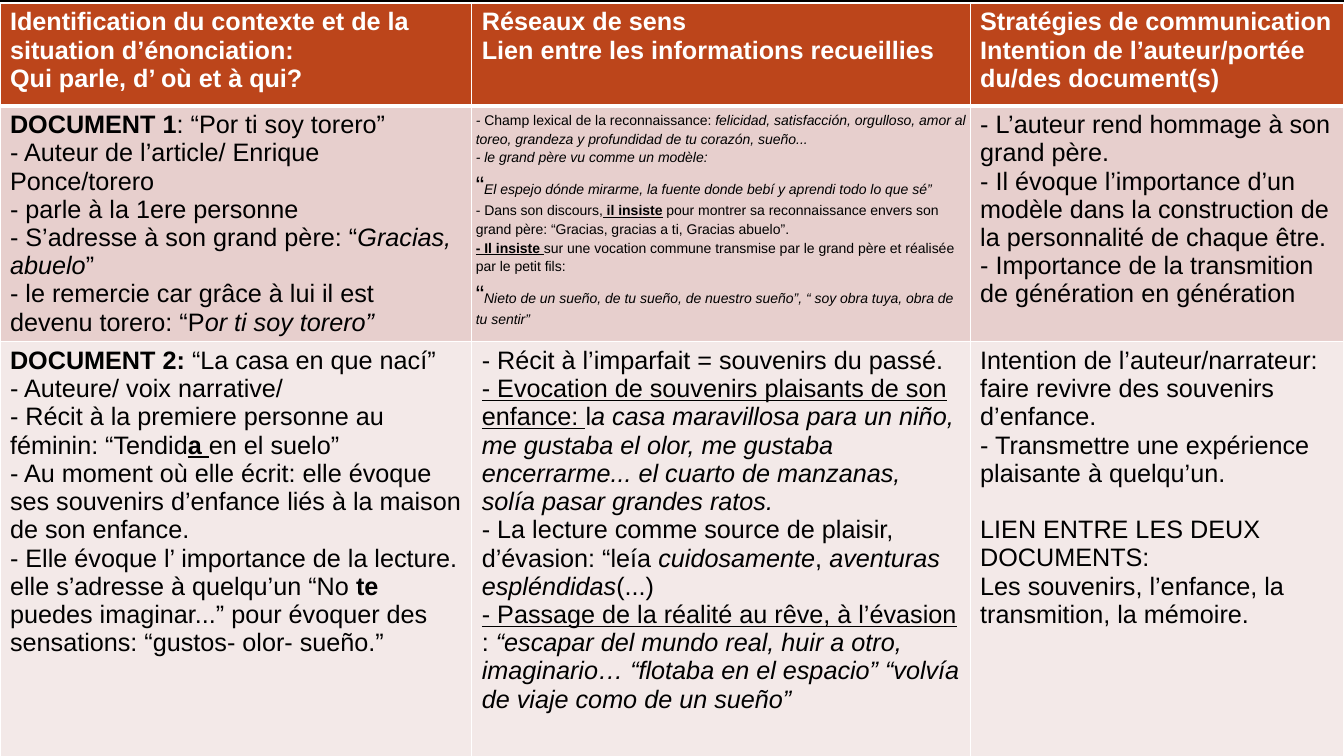
from lxml.etree import SubElement
from pptx import Presentation
from pptx.dml.color import RGBColor
from pptx.enum.text import MSO_ANCHOR
from pptx.oxml.ns import qn
from pptx.util import Pt

BLACK = RGBColor(0x00, 0x00, 0x00)
WHITE = RGBColor(0xFF, 0xFF, 0xFF)
RUST = RGBColor(0xBC, 0x45, 0x1B)
ROSE = RGBColor(0xE7, 0xCF, 0xCD)
PALE_ROSE = RGBColor(0xF3, 0xE9, 0xE8)

FONT = "Arial"
COLUMN_WIDTHS = [337, 356, 267]
ROW_HEIGHTS = [73.44, 167.76, 318.24]
ROW_FILLS = [RUST, ROSE, PALE_ROSE]
ROW_INKS = [WHITE, BLACK, BLACK]
BORDERS = {"lnL": 1, "lnR": 1, "lnT": 1, "lnB": 1}
SMALL_CELL = (1, 1)
LINK_HEADING = "LIEN ENTRE LES DEUX DOCUMENTS:"

HEADER = [
    [[("Identification du contexte et de la situation d’énonciation:", "b")],
     [("Qui parle, d’ où et à qui?", "b")]],
    [[("Réseaux de sens", "b")],
     [("Lien entre les informations recueillies", "b")]],
    [[("Stratégies de communication", "b")],
     [("Intention de l’auteur/portée du/des document(s)", "b")]],
]

DOCUMENT_1 = [
    [[("DOCUMENT 1", "b"), (": “Por ti soy torero”", "")],
     [("- Auteur de l’article/ Enrique Ponce/torero", "")],
     [("- parle à la 1ere personne", "")],
     [("- S’adresse à son grand père: “", ""), ("Gracias, abuelo", "i"), ("”", "")],
     [("- le remercie car grâce à lui il est devenu torero: “P", ""),
      ("or ti soy torero”", "i")]],
    [[("- ", "i"), ("Champ lexical de la reconnaissance: ", ""),
      ("felicidad, satisfacción, orgulloso, amor al toreo, grandeza y "
       "profundidad de tu corazón, sueño...", "i")],
     [("- le grand père vu comme un modèle:", "i")],
     [("“", "", 18),
      ("El espejo dónde mirarme, la fuente donde bebí y aprendi todo lo que sé”", "i")],
     [("- Dans son discours,", ""), (" il insiste", "bu"),
      (" pour montrer sa reconnaissance envers son grand père: "
       "“Gracias, gracias a ti, Gracias abuelo”.", "")],
     [("- Il insiste ", "bu"),
      ("sur une vocation commune transmise par le grand père et réalisée "
       "par le petit fils:", "")],
     [("“", "", 18),
      ("Nieto de un sueño, de tu sueño, de nuestro sueño”, “ soy obra tuya, "
       "obra de tu sentir”", "i")]],
    [[("- L’auteur rend hommage à son grand père.", "")],
     [("- Il évoque l’importance d’un modèle dans la construction de la "
       "personnalité de chaque être.", "")],
     [("- Importance de la transmition de génération en génération", "")]],
]

DOCUMENT_2 = [
    [[("DOCUMENT 2:", "b"), (" “La casa en que nací”", "")],
     [("- Auteure/ voix narrative/", "")],
     [("- Récit à la premiere personne au féminin: “Tendid", ""), ("a", "bu"),
      (" ", "u"), ("en el suelo”", "")],
     [("- Au moment où elle écrit: elle évoque ses souvenirs d’enfance liés "
       "à la maison de son enfance.", "")],
     [("- Elle évoque l’ importance de la lecture.", "")],
     [("elle s’adresse à quelqu’un “No ", ""), ("te ", "b"),
      ("puedes imaginar...” pour évoquer des sensations: “gustos- olor- sueño.”", "")]],
    [[("- Récit à l’imparfait = souvenirs du passé.", "")],
     [("- Evocation de souvenirs plaisants de son enfance: ", "u"), ("l", ""),
      ("a casa maravillosa para un niño, me gustaba el olor, me gustaba "
       "encerrarme... el cuarto de manzanas, solía pasar grandes ratos.", "i")],
     [("- La lecture comme source de plaisir, d’évasion: “leía ", ""),
      ("cuidosamente", "i"), (", ", ""), ("aventuras espléndidas", "i"), ("(...)", "")],
     [("- Passage de la réalité au rêve, à l’évasion", "u"), (" :", ""),
      (" “escapar del mundo real, huir a otro, imaginario… “flotaba en el "
       "espacio” “volvía de viaje como de un sueño”", "i")]],
    [[("Intention de l’auteur/narrateur: faire revivre des souvenirs d’enfance.", "")],
     [("- Transmettre une expérience plaisante à quelqu’un.", "")],
     [(LINK_HEADING, "")],
     [("Les souvenirs, l’enfance, la transmition, la mémoire.", "")]],
]


def add_span(para, text, size, color, style=""):
    """Append a run; style may hold b, i and u for bold, italic, underline."""
    span = para.add_run()
    span.text = text
    font = span.font
    font.name, font.size, font.color.rgb = FONT, Pt(size), color
    font.bold, font.italic, font.underline = "b" in style, "i" in style, "u" in style


def draw_borders(cell, widths):
    """Give a cell white edges of the named widths."""
    properties = cell._tc.get_or_add_tcPr()
    for position, (edge, width) in enumerate(widths.items()):
        line = SubElement(properties, qn("a:" + edge), w=str(Pt(width)))
        fill = SubElement(line, qn("a:solidFill"))
        SubElement(fill, qn("a:srgbClr"), val=str(WHITE))
        properties.insert(position, line)


def fill_cell(cell, paragraphs, color, fill, widths, small=False):
    """Format one cell and write its paragraphs."""
    cell.fill.solid()
    cell.fill.fore_color.rgb = fill
    cell.vertical_anchor = MSO_ANCHOR.TOP
    draw_borders(cell, widths)
    if small:
        cell.margin_left = cell.margin_right = Pt(2.88)
        cell.margin_top = cell.margin_bottom = Pt(2.88)
    frame = cell.text_frame
    for index, spans in enumerate(paragraphs):
        para = frame.add_paragraph() if index else frame.paragraphs[0]
        if small:
            para.line_spacing = 1.2
        if spans[0][0] == LINK_HEADING:
            para.space_before = Pt(20)
        for text, style, *size in spans:
            default = 10 if small else 18
            add_span(para, text, size[0] if size else default, color, style)


def add_analysis_table(page, left, top, width, height):
    """Place the table comparing the two documents in the given box."""
    rows = [HEADER, DOCUMENT_1, DOCUMENT_2]
    frame = page.shapes.add_table(len(rows), len(COLUMN_WIDTHS),
                                  Pt(left), Pt(top), Pt(width), Pt(height))
    table = frame.table
    table.horz_banding = False
    for column, size in zip(table.columns, COLUMN_WIDTHS):
        column.width = Pt(size)
    for row, size in zip(table.rows, ROW_HEIGHTS):
        row.height = Pt(size)
    for r, cells in enumerate(rows):
        widths = dict(BORDERS)
        if r == 0:
            widths["lnB"] = 3
        elif r == 1:
            widths["lnT"] = 3
        for c, paragraphs in enumerate(cells):
            fill_cell(table.cell(r, c), paragraphs, ROW_INKS[r], ROW_FILLS[r],
                      widths, small=(r, c) == SMALL_CELL)


def main():
    """Build the deck and save it."""
    deck = Presentation()
    deck.slide_width, deck.slide_height = Pt(960), Pt(540)
    page = deck.slides.add_slide(deck.slide_layouts[6])
    page.background.fill.solid()
    page.background.fill.fore_color.rgb = BLACK
    add_analysis_table(page, 0, 2.16, sum(COLUMN_WIDTHS), sum(ROW_HEIGHTS))
    deck.save("out.pptx")


if __name__ == "__main__":
    main()
